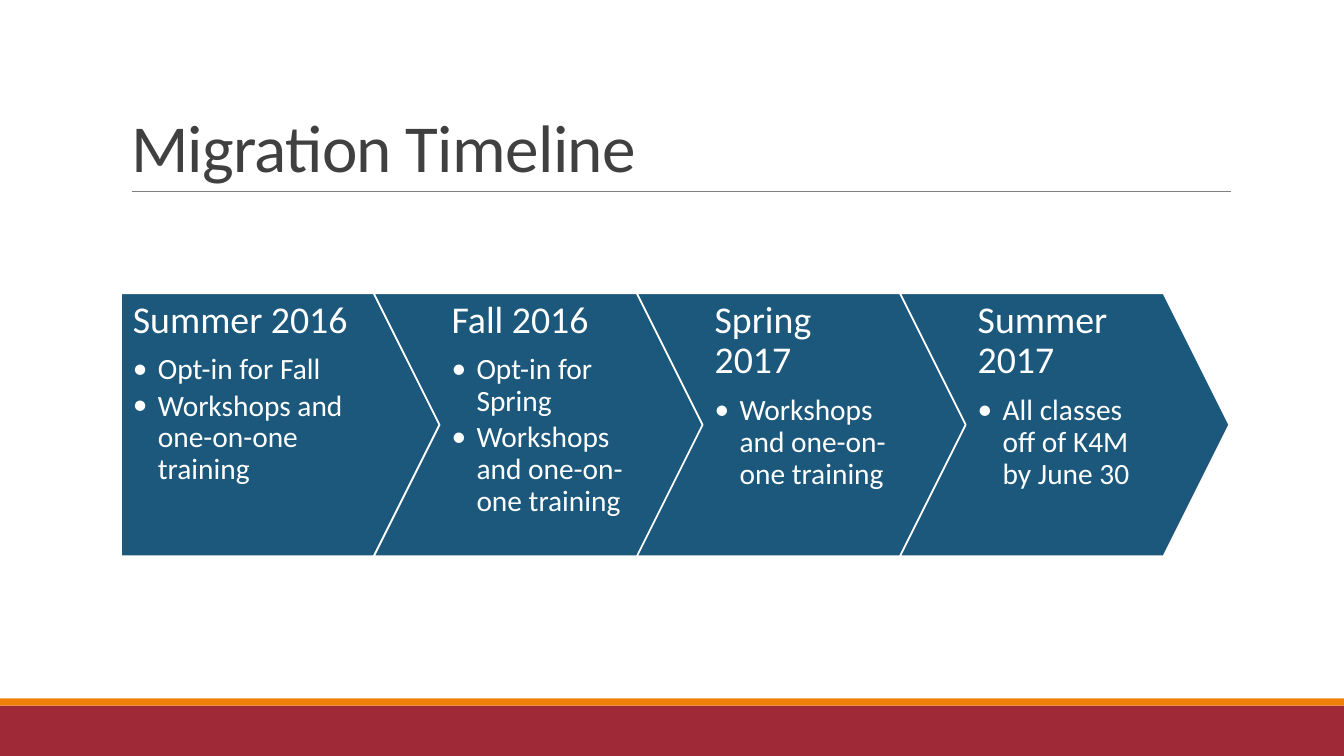
from lxml import etree
from pptx import Presentation
from pptx import util as u
from pptx.dml.color import RGBColor
from pptx.enum import shapes, text
from pptx.oxml import ns

COLORS = {"red": "9F2936", "orange": "F07F09", "blue": "1B587C",
          "rule": "808080", "title": "404040", "white": "FFFFFF"}
FONT = "Calibri"
PHASES = [
    ("Summer 2016", ["Opt-in for Fall", "Workshops and one-on-one training"]),
    ("Fall 2016", ["Opt-in for Spring", "Workshops and one-on-one training"]),
    ("Spring 2017", ["Workshops and one-on-one training"]),
    ("Summer 2017", ["All classes off of K4M by June 30"]),
]
TOP, HEIGHT, STEP = 7.39, 6.63, 6.63
FIRST_LEFT, CHEVRON_LEFT, POINT = 3.05, 2.79, 1.66


def add_block(kind, left, top, width, height, color):
    shape = slide.shapes.add_shape(kind, u.Cm(left), u.Cm(top), u.Cm(width), u.Cm(height))
    shape.shadow.inherit = False
    shape.fill.solid()
    shape.fill.fore_color.rgb = RGBColor.from_string(COLORS[color])
    shape.line.fill.background()
    return shape


def style_paragraph(paragraph, size, color, spacing, after):
    for name, value in {"line_spacing": spacing, "space_before": u.Pt(0),
                        "space_after": u.Pt(after),
                        "alignment": text.PP_ALIGN.LEFT}.items():
        setattr(paragraph, name, value)
    font = paragraph.runs[0].font
    font.name, font.size = FONT, u.Pt(size)
    font.color.rgb = RGBColor.from_string(COLORS[color])


presentation = Presentation()
presentation.slide_width, presentation.slide_height = u.Cm(33.87), u.Cm(19.05)
slide = presentation.slides.add_slide(presentation.slide_layouts[5])

add_block(shapes.MSO_SHAPE.RECTANGLE, 0, 17.78, 33.87, 1.27, "red")
add_block(shapes.MSO_SHAPE.RECTANGLE, 0, 17.6, 33.87, 0.18, "orange")

rule = slide.shapes.add_connector(shapes.MSO_CONNECTOR.STRAIGHT,
                                  u.Cm(3.32), u.Cm(4.82), u.Cm(31.01), u.Cm(4.82))
rule.line.color.rgb = RGBColor.from_string(COLORS["rule"])
rule.line.width = u.Pt(0.5)
etree.SubElement(rule._element.spPr, ns.qn("a:effectLst"))

title = slide.shapes.title
for name, value in {"left": 3.05, "top": 0.79, "width": 27.94, "height": 4.04}.items():
    setattr(title, name, u.Cm(value))
title.text_frame.text = "Migration Timeline"
title.text_frame.vertical_anchor = text.MSO_ANCHOR.BOTTOM
title.text_frame.auto_size = text.MSO_AUTO_SIZE.NONE
heading = title.text_frame.paragraphs[0]
style_paragraph(heading, 48, "title", 0.85, 0)
heading.runs[0]._r.get_or_add_rPr().set("spc", "-50")

for index, (season, tasks) in enumerate(PHASES):
    if index == 0:
        kind, left, width = shapes.MSO_SHAPE.PENTAGON, FIRST_LEFT, 8.03
        text_left, text_width, right_inset = FIRST_LEFT, 7.19, 1.17
    else:
        kind, left, width = shapes.MSO_SHAPE.CHEVRON, CHEVRON_LEFT + index * STEP, 8.3
        text_left, text_width, right_inset = left + POINT, 4.98, 0.3

    arrow = add_block(kind, left, TOP, width, HEIGHT, "blue")
    arrow.adjustments[0] = 0.25
    arrow.line.color.rgb = RGBColor.from_string(COLORS["white"])
    arrow.line.width = u.Pt(1.25)

    frame = slide.shapes.add_textbox(u.Cm(text_left), u.Cm(TOP),
                                     u.Cm(text_width), u.Cm(HEIGHT)).text_frame
    for name, value in {"word_wrap": True, "vertical_anchor": text.MSO_ANCHOR.TOP,
                        "margin_left": u.Cm(0.3), "margin_right": u.Cm(right_inset),
                        "margin_top": u.Cm(0.18), "margin_bottom": u.Cm(0.18)}.items():
        setattr(frame, name, value)
    frame.text = season
    style_paragraph(frame.paragraphs[0], 27, "white", 0.9, 9.45)
    for task in tasks:
        paragraph = frame.add_paragraph()
        paragraph.text = task
        paragraph.level = 1
        style_paragraph(paragraph, 21, "white", 0.9, 3.15)
        properties = paragraph._p.get_or_add_pPr()
        properties.set("marL", str(u.Cm(0.63)))
        properties.set("indent", str(-u.Cm(0.63)))
        etree.SubElement(properties, ns.qn("a:buFont")).set("typeface", FONT)
        etree.SubElement(properties, ns.qn("a:buChar")).set("char", "•")

presentation.save("out.pptx")
